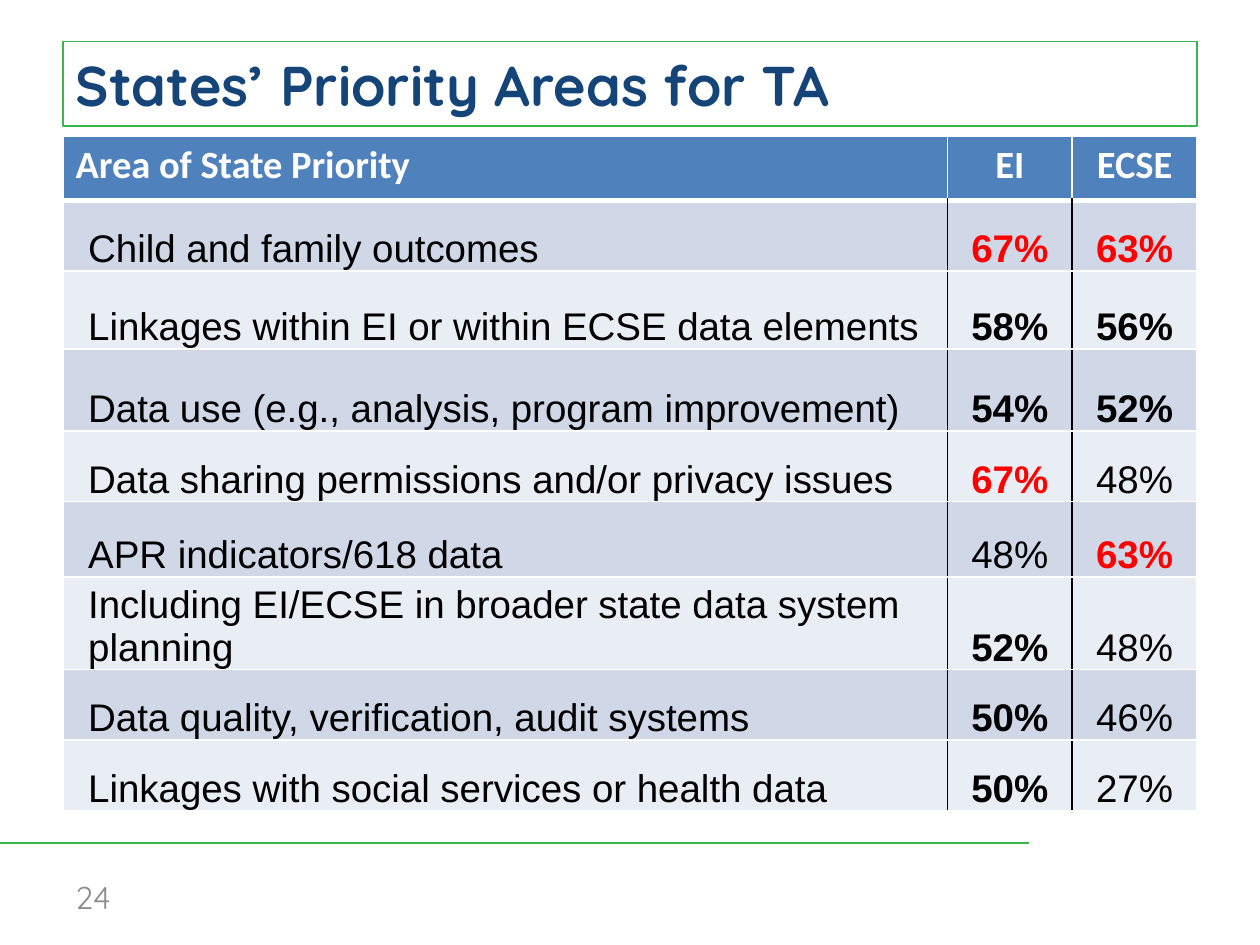
from lxml import etree
from pptx import Presentation
from pptx.dml.color import RGBColor
from pptx.enum.shapes import MSO_CONNECTOR
from pptx.enum.text import MSO_ANCHOR, PP_ALIGN
from pptx.oxml.ns import qn
from pptx.util import Inches, Pt

STRAIGHT = MSO_CONNECTOR.STRAIGHT
LEFT, CENTER = PP_ALIGN.LEFT, PP_ALIGN.CENTER
TOP, MIDDLE, BOTTOM = MSO_ANCHOR.TOP, MSO_ANCHOR.MIDDLE, MSO_ANCHOR.BOTTOM

GREEN = RGBColor(0x39, 0xB5, 0x4A)
NAVY = RGBColor(0x15, 0x45, 0x78)
GRAY = RGBColor(0x8C, 0x8C, 0x8C)
BLUE = RGBColor(0x4F, 0x81, 0xBD)
DARK_BAND = RGBColor(0xD0, 0xD8, 0xE8)
LIGHT_BAND = RGBColor(0xE9, 0xED, 0xF4)
WHITE = RGBColor(0xFF, 0xFF, 0xFF)
BLACK = RGBColor(0x00, 0x00, 0x00)
RED = RGBColor(0xFF, 0x00, 0x00)

HEADERS = ("Area of State Priority", "EI", "ECSE")
PRIORITIES = [
    ("Child and family outcomes", 67, 63),
    ("Linkages within EI or within ECSE data elements", 58, 56),
    ("Data use (e.g., analysis, program improvement)", 54, 52),
    ("Data sharing permissions and/or privacy issues", 67, 48),
    ("APR indicators/618 data", 48, 63),
    ("Including EI/ECSE in broader state data system planning", 52, 48),
    ("Data quality, verification, audit systems", 50, 46),
    ("Linkages with social services or health data", 50, 27),
]
COLUMN_WIDTHS = (7.02, 0.99, 0.99)
ROW_HEIGHTS = (0.51, 0.56, 0.62, 0.65, 0.56, 0.6, 0.62, 0.56, 0.56)


def style_text(paragraph, font_name, size, color, bold=False, alignment=LEFT):
    paragraph.alignment = alignment
    font = paragraph.runs[0].font
    font.name = font_name
    font.size = Pt(size)
    font.bold = bold
    font.color.rgb = color


def add_border(cell, side, color, points):
    """Append one border; sides must come in the order L, R, T, B, before the fill."""
    properties = cell._tc.get_or_add_tcPr()
    line = etree.SubElement(properties, qn(f"a:ln{side}"), w=str(Pt(points)))
    fill = etree.SubElement(line, qn("a:solidFill"))
    etree.SubElement(fill, qn("a:srgbClr"), val=str(color))


presentation = Presentation()
presentation.slide_width = Inches(10)
presentation.slide_height = Inches(7.5)
slide = presentation.slides.add_slide(presentation.slide_layouts[5])

# Title
title = slide.shapes.title
title.left, title.top = Inches(0.5), Inches(0.33)
title.width, title.height = Inches(9), Inches(0.67)
title.line.color.rgb = GREEN
title.line.width = Pt(1)
title.text_frame.text = "States’ Priority Areas for TA"
title.text_frame.vertical_anchor = MIDDLE
style_text(title.text_frame.paragraphs[0], "Quicksand", 32, NAVY, bold=True)

# Footer rule and page number
footer_line = slide.shapes.add_connector(
    STRAIGHT, Inches(0), Inches(6.69), Inches(8.17), Inches(6.69))
footer_line.line.color.rgb = GREEN
footer_line.line.width = Pt(1.5)
etree.SubElement(footer_line._element.spPr, qn("a:effectLst"))

page_number = slide.shapes.add_textbox(
    Inches(0.5), Inches(6.92), Inches(2.33), Inches(0.4))
page_number.text_frame.word_wrap = True
page_number.text_frame.vertical_anchor = MIDDLE
page_number.text_frame.text = "24"
style_text(page_number.text_frame.paragraphs[0], "Quicksand", 18, GRAY)

# Priority table
rows = [HEADERS] + PRIORITIES
table = slide.shapes.add_table(
    len(rows), len(HEADERS), Inches(0.5), Inches(1.08),
    Inches(9), Inches(sum(ROW_HEIGHTS))).table
for column, width in zip(table.columns, COLUMN_WIDTHS):
    column.width = Inches(width)
for row, height in zip(table.rows, ROW_HEIGHTS):
    row.height = Inches(height)

last_column = len(HEADERS) - 1
top_shares = [max(shares) for shares in list(zip(*PRIORITIES))[1:]]

for row_index, values in enumerate(rows):
    is_header = row_index == 0
    for column_index, value in enumerate(values):
        cell = table.cell(row_index, column_index)
        is_share = column_index > 0
        divider = WHITE if is_header else BLACK
        add_border(cell, "L", divider if is_share else WHITE, 1)
        add_border(cell, "R", divider if column_index < last_column else WHITE, 1)
        add_border(cell, "T", WHITE, 3 if row_index == 1 else 1)
        add_border(cell, "B", WHITE, 3 if is_header else 1)
        cell.fill.solid()

        cell.text_frame.text = value if is_header or not is_share else f"{value}%"
        paragraph = cell.text_frame.paragraphs[0]
        alignment = CENTER if is_share else LEFT
        if is_header:
            cell.fill.fore_color.rgb = BLUE
            cell.vertical_anchor = TOP
            style_text(paragraph, "Calibri", 22, WHITE, True, alignment)
            continue

        cell.fill.fore_color.rgb = DARK_BAND if row_index % 2 else LIGHT_BAND
        cell.vertical_anchor = BOTTOM
        cell.margin_left = cell.margin_right = Inches(0.08)
        cell.margin_top = cell.margin_bottom = Inches(0)
        paragraph.space_after = Pt(1)
        if is_share:
            color = RED if value == top_shares[column_index - 1] else BLACK
            style_text(paragraph, "Arial", 22, color, value >= 50, alignment)
        else:
            paragraph._p.get_or_add_pPr().set("marL", str(Inches(0.12)))
            style_text(paragraph, "Arial", 22, BLACK)

presentation.save("out.pptx")
